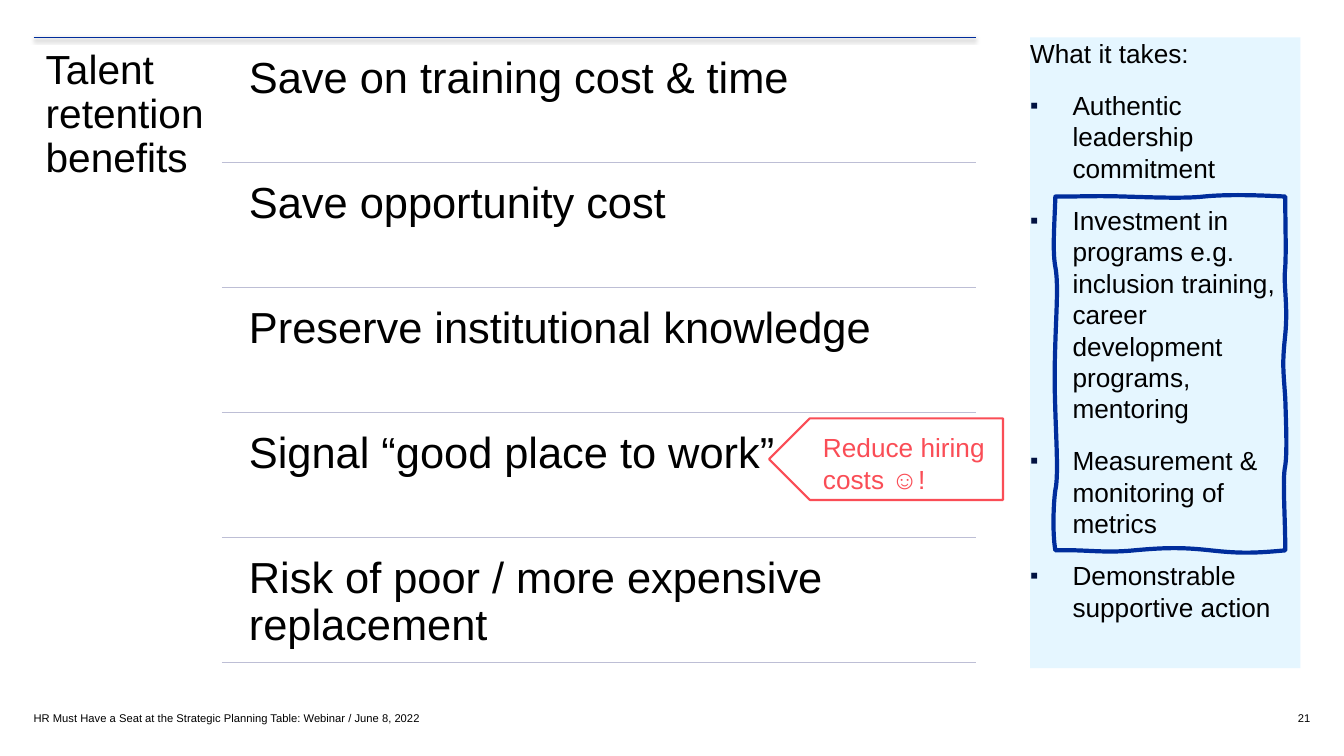
import dataclasses
import typing

import pptx
import pptx.dml.color
import pptx.enum.shapes
import pptx.enum.text
import pptx.oxml
import pptx.oxml.ns
import pptx.util

Pt = pptx.util.Pt
Anchor = pptx.enum.text.MSO_ANCHOR
Align = pptx.enum.text.PP_ALIGN
ShapeKind = pptx.enum.shapes.MSO_SHAPE

COLORS = {
    "text": "000000",
    "navy": "002D9C",
    "divider": "BDBED5",
    "panel": "E5F6FF",
    "bullet": "001141",
    "callout": "FA4D56",
}
FONT = "Arial"
MARGIN = 24
TOP = 26.64
RIGHT = 696.96
ROW_PITCH = 89.28
ROW_LEFT = 168.48
DIVIDER_LEFT = 158.4
FIRST_DIVIDER = 115.92
ROW_TEXT_OFFSET = 4.32
BULLET_INDENT = 30.24

BENEFITS = [
    "Save on training cost & time",
    "Save opportunity cost",
    "Preserve institutional knowledge",
    "Signal “good place to work”",
    "Risk of poor / more expensive replacement",
]
REQUIREMENTS = [
    "Authentic leadership commitment",
    "Investment in programs e.g. inclusion training, career development programs, mentoring",
    "Measurement & monitoring of metrics",
    "Demonstrable supportive action",
]

SKETCH_ORIGIN = (753.84, 140.4)
SKETCH_CURVES = [
    ((22.3, 0), (28.1, -0.7), (49.7, 0)),
    ((72, 0.7), (92.9, 1.4), (105.8, 0)),
    ((119.5, -1.4), (138.2, -1.4), (164.2, 0)),
    ((164.2, 21.6), (164.9, 36.7), (164.2, 50.4)),
    ((162.7, 63.4), (166.3, 77), (164.2, 98.6)),
    ((162, 119.5), (162.7, 122.4), (164.2, 144)),
    ((164.9, 165.6), (165.6, 182.2), (164.2, 192.2)),
    ((162, 201.6), (164.2, 227.5), (164.2, 252.7)),
    ((141.1, 254.9), (131, 254.9), (110.9, 252.7)),
    ((91.4, 250.6), (79.2, 250.6), (56.2, 252.7)),
    ((33.8, 254.9), (22.3, 252), (0, 252.7)),
    ((-2.2, 240.5), (-1.4, 218.9), (0, 209.5)),
    ((2.2, 200.2), (0.7, 175.7), (0, 154.1)),
    ((-0.7, 132.5), (-0.7, 125.3), (0, 103.7)),
    ((0.7, 81.4), (2.2, 61.9), (0, 50.4)),
    ((-2.2, 38.9), (-0.7, 20.9), (0, 0)),
]


@dataclasses.dataclass
class TextBlock:
    box: tuple[float, float, float, float]
    paragraphs: list[str]
    size: float
    inset: float = 0
    color: str = "text"
    spacing: float = 1.0
    align: typing.Any = Align.LEFT
    anchor: typing.Any = Anchor.TOP
    space_before: float = 0
    kind: typing.Any = None
    fill: str = ""
    outline: str = ""
    bulleted: bool = False


@dataclasses.dataclass
class Rule:
    left: float
    y: float
    color: str
    shadow: bool = False


def rgb(name: str) -> pptx.dml.color.RGBColor:
    return pptx.dml.color.RGBColor.from_string(COLORS[name])


def apply_format(target: typing.Any, values: dict[str, typing.Any]) -> None:
    for name, value in values.items():
        setattr(target, name, value)


def add_bullet(paragraph: typing.Any) -> None:
    properties = paragraph._p.get_or_add_pPr()
    indent = Pt(BULLET_INDENT)
    properties.set("marL", str(indent))
    properties.set("indent", str(-indent))
    namespace = pptx.oxml.ns.nsdecls("a")
    for xml in (
        f'<a:buClr {namespace}><a:srgbClr val="{COLORS["bullet"]}"/></a:buClr>',
        f'<a:buSzPct {namespace} val="90000"/>',
        f'<a:buFont {namespace} typeface="{FONT}"/>',
        f'<a:buChar {namespace} char="▪"/>',
    ):
        properties.append(pptx.oxml.parse_xml(xml))


def style_shape(shape: typing.Any, fill: str, outline: str, width: float) -> None:
    shape.shadow.inherit = False
    if fill:
        shape.fill.solid()
        shape.fill.fore_color.rgb = rgb(fill)
    else:
        shape.fill.background()
    if outline:
        shape.line.color.rgb = rgb(outline)
        shape.line.width = Pt(width)
    else:
        shape.line.fill.background()


def draw_text(slide: typing.Any, block: TextBlock) -> None:
    box = [Pt(length) for length in block.box]
    if block.kind is None:
        shape = slide.shapes.add_textbox(*box)
    else:
        shape = slide.shapes.add_shape(block.kind, *box)
        style_shape(shape, block.fill, block.outline, 1.5)
        if block.kind == ShapeKind.LEFT_ARROW:
            shape.adjustments[0] = 1
            shape.adjustments[1] = 0.5
    frame = shape.text_frame
    margins = {f"margin_{side}": Pt(block.inset) for side in ("left", "top", "right", "bottom")}
    apply_format(frame, {"word_wrap": True, "vertical_anchor": block.anchor, **margins})
    for index, text in enumerate(block.paragraphs):
        paragraph = frame.add_paragraph() if index else frame.paragraphs[0]
        apply_format(paragraph, {
            "alignment": block.align,
            "line_spacing": block.spacing,
            "space_before": Pt(block.space_before if index else 0),
        })
        if block.bulleted and index:
            add_bullet(paragraph)
        run = paragraph.add_run()
        run.text = text
        apply_format(run.font, {"name": FONT, "size": Pt(block.size)})
        run.font.color.rgb = rgb(block.color)


def draw_rule(slide: typing.Any, rule: Rule) -> None:
    line = slide.shapes.add_connector(
        pptx.enum.shapes.MSO_CONNECTOR.STRAIGHT, Pt(rule.left), Pt(rule.y), Pt(RIGHT), Pt(rule.y))
    line.line.color.rgb = rgb(rule.color)
    line.line.width = Pt(0.75)
    shadow = (
        f'<a:outerShdw blurRad="{Pt(3.1)}" dist="{Pt(1.8)}" dir="5400000" rotWithShape="0">'
        f'<a:srgbClr val="{COLORS["text"]}"><a:alpha val="35000"/></a:srgbClr></a:outerShdw>'
    ) if rule.shadow else ""
    line._element.spPr.append(pptx.oxml.parse_xml(
        f'<a:effectLst {pptx.oxml.ns.nsdecls("a")}>{shadow}</a:effectLst>'))


def draw_sketch_frame(slide: typing.Any) -> None:
    builder = slide.shapes.build_freeform(0, 0)
    builder.add_line_segments(
        [(Pt(end[0]), Pt(end[1])) for _, _, end in SKETCH_CURVES], close=True)
    shape = builder.convert_to_shape(*(Pt(length) for length in SKETCH_ORIGIN))
    segments = shape._element.findall(".//" + pptx.oxml.ns.qn("a:lnTo"))
    for segment, curve in zip(segments, SKETCH_CURVES):
        points = "".join(f'<a:pt x="{Pt(x)}" y="{Pt(y)}"/>' for x, y in curve)
        segment.getparent().replace(segment, pptx.oxml.parse_xml(
            f'<a:cubicBezTo {pptx.oxml.ns.nsdecls("a")}>{points}</a:cubicBezTo>'))
    style_shape(shape, "", "navy", 3)


def main() -> None:
    presentation = pptx.Presentation()
    apply_format(presentation, {"slide_width": Pt(960), "slide_height": Pt(540)})
    slide = presentation.slides.add_slide(presentation.slide_layouts[6])
    draw_text(slide, TextBlock(
        (735.84, TOP, 192.96, 450.72), ["What it takes:", *REQUIREMENTS], 18.7,
        space_before=14.7, kind=ShapeKind.RECTANGLE, fill="panel", bulleted=True))
    draw_text(slide, TextBlock(
        (743.76, 504, 192.24, 17.28), ["21"], 8, align=Align.RIGHT, anchor=Anchor.MIDDLE))
    draw_rule(slide, Rule(MARGIN, TOP, "navy", shadow=True))
    draw_text(slide, TextBlock(
        (MARGIN, TOP, 134.64, 450.72), ["Talent retention benefits"], 29, inset=8.64, spacing=0.9))
    for index, benefit in enumerate(BENEFITS):
        offset = index * ROW_PITCH
        draw_text(slide, TextBlock(
            (ROW_LEFT, TOP + ROW_TEXT_OFFSET + offset, RIGHT - ROW_LEFT, 84.96),
            [benefit], 31, inset=9.36, spacing=0.9))
        draw_rule(slide, Rule(DIVIDER_LEFT, FIRST_DIVIDER + offset, "divider"))
    draw_text(slide, TextBlock(
        (549.36, 298.8, 167.04, 58.32), ["Reduce hiring costs ☺!"], 18.7, inset=9.36,
        color="callout", kind=ShapeKind.LEFT_ARROW, outline="callout"))
    draw_sketch_frame(slide)
    draw_text(slide, TextBlock(
        (MARGIN, 504, 432, 17.28),
        ["HR Must Have a Seat at the Strategic Planning Table: Webinar / June 8, 2022"],
        8, anchor=Anchor.MIDDLE))
    presentation.save("out.pptx")


if __name__ == "__main__":
    main()
